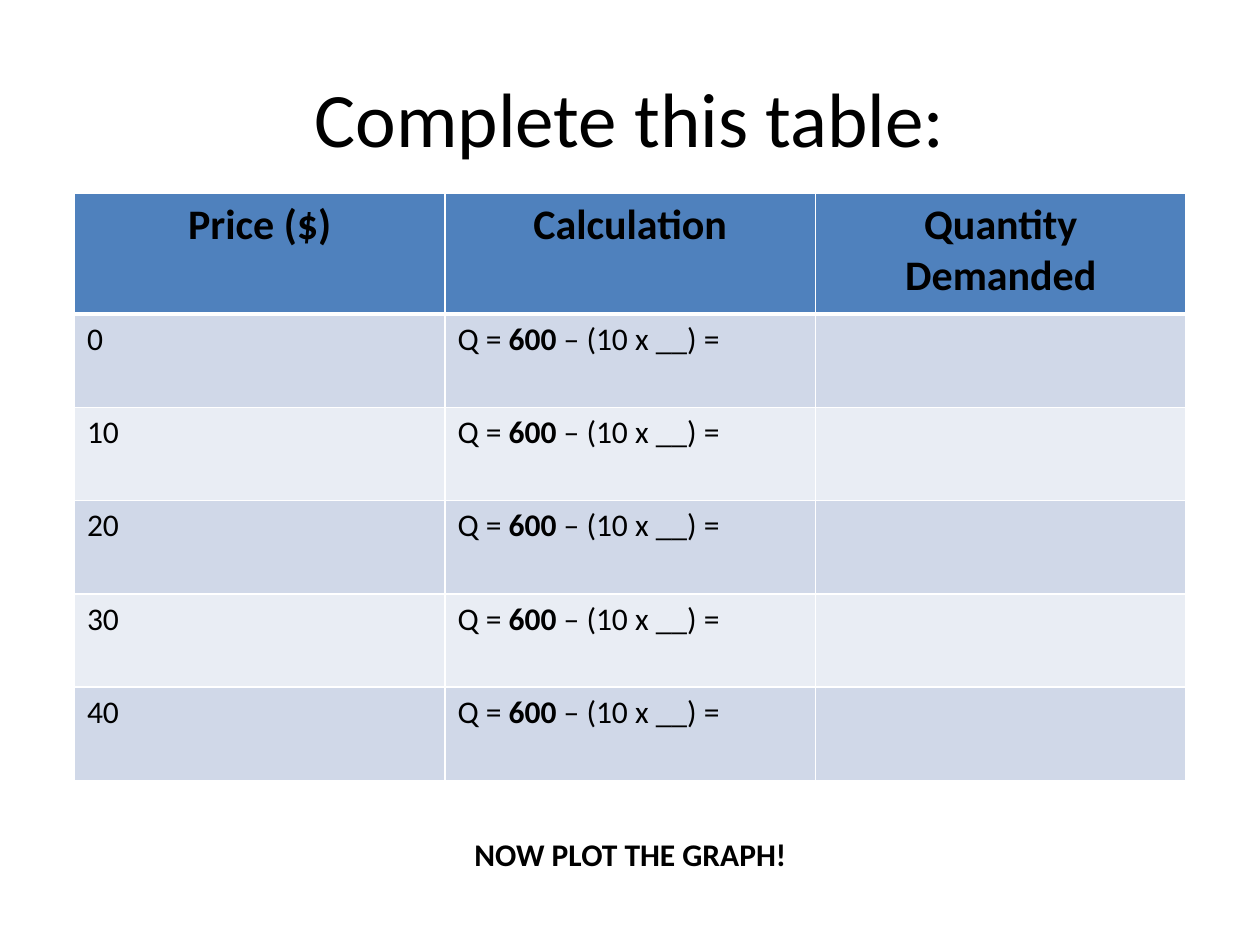
"""Build the demand-schedule worksheet slide."""
from lxml import etree
from pptx import Presentation
from pptx.dml.color import RGBColor
from pptx.enum.text import MSO_ANCHOR, PP_ALIGN
from pptx.oxml.ns import qn
from pptx.util import Cm, Pt

CENTER, LEFT = PP_ALIGN.CENTER, PP_ALIGN.LEFT
MIDDLE = MSO_ANCHOR.MIDDLE

TITLE = "Complete this table:"
HEADERS = ["Price ($)", "Calculation", "Quantity Demanded"]
PRICES = [0, 10, 20, 30, 40]
FORMULA = [("Q = ", False), ("600", True), (" – (10 x __) =", False)]
PROMPT = "NOW PLOT THE GRAPH!"

THEME = {
    "font": "Calibri", "text": "000000", "header": "4F81BD",
    "bands": ["D0D8E8", "E9EDF4"], "border": "FFFFFF",
    "title_size": 44, "header_size": 24, "body_size": 18,
    "thin": 1, "thick": 3,
}
COL_W, HEADER_H, ROW_H = 7.47, 2.44, 1.88


def write(tf, runs, size, align=LEFT):
    p = tf.paragraphs[0]
    p.alignment = align
    for text, bold in runs:
        r = p.add_run()
        r.text = text
        r.font.name = THEME["font"]
        r.font.size = Pt(size)
        r.font.bold = bold
        r.font.color.rgb = RGBColor.from_string(THEME["text"])


def set_borders(cell, widths):
    tc_pr = cell._tc.get_or_add_tcPr()
    for side, width in widths.items():
        ln = etree.SubElement(tc_pr, qn(f"a:ln{side}"), w=str(Pt(width)))
        fill = etree.SubElement(ln, qn("a:solidFill"))
        etree.SubElement(fill, qn("a:srgbClr"), val=THEME["border"])


def add_title(s):
    sp = s.shapes.title
    sp.left, sp.top, sp.width, sp.height = Cm(1.27), Cm(0.76), Cm(22.86), Cm(3.18)
    sp.text_frame.vertical_anchor = MIDDLE
    write(sp.text_frame, [(TITLE, False)], THEME["title_size"], CENTER)


def add_schedule(s):
    rows = [[[(h, True)] for h in HEADERS]]
    rows += [[[(str(price), False)], FORMULA, []] for price in PRICES]
    heights = [HEADER_H] + [ROW_H] * len(PRICES)
    table = s.shapes.add_table(
        len(rows), len(HEADERS), Cm(1.5), Cm(3.89),
        Cm(COL_W * len(HEADERS)), Cm(sum(heights))).table
    for col in table.columns:
        col.width = Cm(COL_W)
    thin, thick = THEME["thin"], THEME["thick"]
    for i, (row, height) in enumerate(zip(rows, heights)):
        table.rows[i].height = Cm(height)
        header = i == 0
        color = THEME["header"] if header else THEME["bands"][(i - 1) % 2]
        size = THEME["header_size"] if header else THEME["body_size"]
        borders = {"L": thin, "R": thin, "T": thick if i == 1 else thin,
                   "B": thick if header else thin}
        for j, runs in enumerate(row):
            cell = table.cell(i, j)
            set_borders(cell, borders)
            cell.fill.solid()
            cell.fill.fore_color.rgb = RGBColor.from_string(color)
            write(cell.text_frame, runs, size, CENTER if header else LEFT)


def add_prompt(s):
    sp = s.shapes.add_textbox(Cm(2.31), Cm(16.71), Cm(20.8), Cm(1.02))
    sp.text_frame.word_wrap = True
    write(sp.text_frame, [(PROMPT, True)], THEME["body_size"], CENTER)


def main():
    prs = Presentation()
    prs.slide_width, prs.slide_height = Cm(25.4), Cm(19.05)
    s = prs.slides.add_slide(prs.slide_layouts[5])
    add_title(s)
    add_schedule(s)
    add_prompt(s)
    prs.save("out.pptx")


if __name__ == "__main__":
    main()
